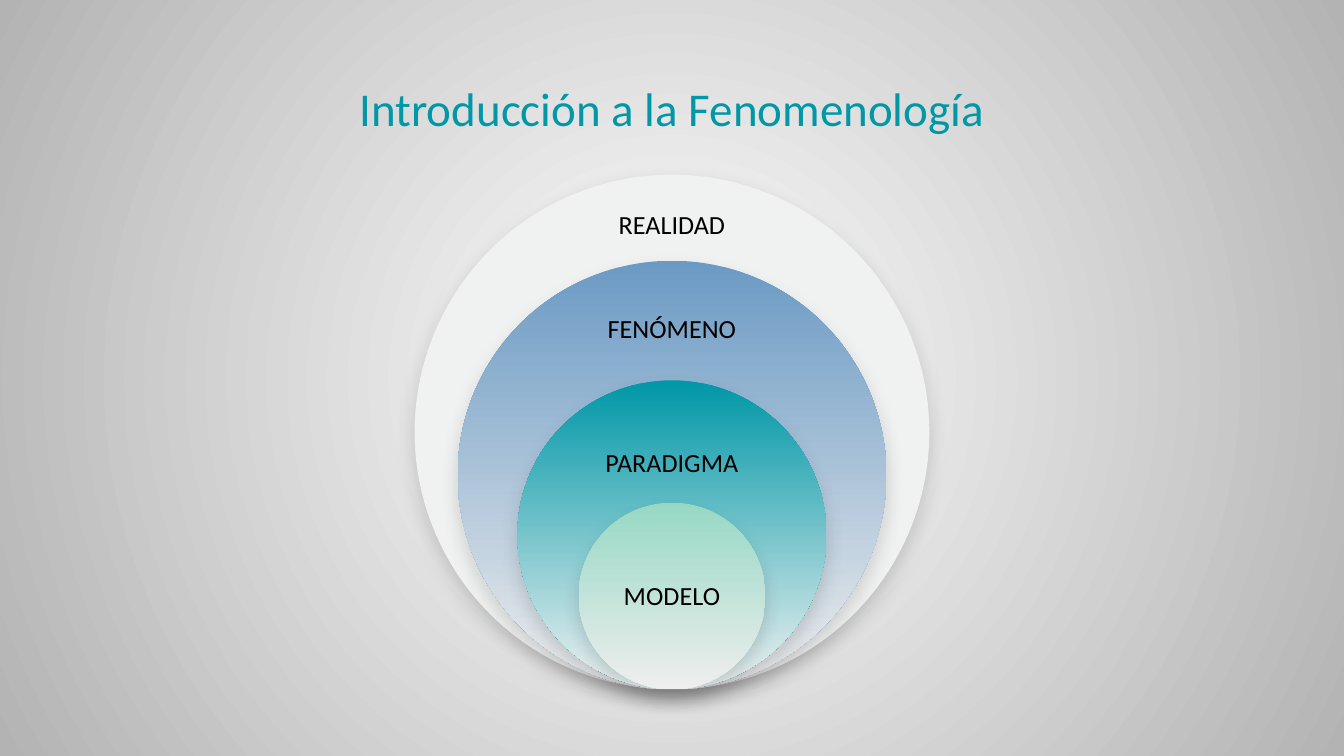
from dataclasses import dataclass

from lxml.etree import SubElement
from pptx import Presentation
from pptx.dml.color import RGBColor
from pptx.enum.shapes import MSO_SHAPE as Shape
from pptx.enum.text import MSO_ANCHOR as Anchor, PP_ALIGN as Align
from pptx.oxml.ns import qn
from pptx.util import Inches, Pt


@dataclass(frozen=True)
class Theme:
    """Colours, font and type sizes of the slide."""
    font: str = "Calibri"
    title_size: float = 25.2
    label_size: float = 14
    title: str = "0097A7"
    label: str = "000000"
    shadow: str = "000000"
    backdrop: tuple = ("FFFFFF", "B3B3B3")
    reality: tuple = ("EFF2F1",)
    phenomenon: tuple = ("6B9AC4", "EEEEEE")
    paradigm: tuple = ("0097A7", "EFF2F1")
    model: tuple = ("97D8C4", "EEEEEE")


@dataclass(frozen=True)
class Ring:
    """A circle and its label, with the label's drop from the circle's top."""
    label: str
    diameter: float
    label_width: float
    drop: float
    colours: tuple
    shadow_distance: float = 5.2


THEME = Theme()

RINGS = [
    Ring("REALIDAD", 3.83, 1.2, 0.37, THEME.reality, 4.5),
    Ring("FENÓMENO", 3.19, 1.56, 0.5, THEME.phenomenon),
    Ring("PARADIGMA", 2.3, 1.61, 0.61, THEME.paradigm),
    Ring("MODELO", 1.39, 1.28, 0.69, THEME.model),
]


def paint(fill, colours):
    """Fill with one colour, or with a gradient from the first to the second."""
    if len(colours) == 1:
        fill.solid()
        fill.fore_color.rgb = RGBColor.from_string(colours[0])
        return
    fill.gradient()
    for stop, colour in zip(fill.gradient_stops, colours):
        stop.color.rgb = RGBColor.from_string(colour)


def add_shadow(shape, distance, blur=10.1, opacity=15):
    """Give a shape a soft shadow that falls straight down."""
    shape.shadow.inherit = False
    effects = shape.element.spPr.find(qn("a:effectLst"))
    shadow = SubElement(effects, qn("a:outerShdw"), blurRad=str(Pt(blur)),
                        dist=str(Pt(distance)), dir="5400000",
                        algn="bl", rotWithShape="0")
    colour = SubElement(shadow, qn("a:srgbClr"), val=THEME.shadow)
    SubElement(colour, qn("a:alpha"), val=str(opacity * 1000))


def add_text(page, text, left, top, width, height, *, size, colour,
             anchor=Anchor.MIDDLE):
    """Add a centred line of text in a box measured in inches."""
    box = page.shapes.add_textbox(*map(Inches, (left, top, width, height)))
    frame = box.text_frame
    frame.word_wrap = True
    frame.vertical_anchor = anchor
    frame.margin_left = frame.margin_right = Inches(0.1)
    frame.margin_top = frame.margin_bottom = Inches(0.1)
    para = frame.paragraphs[0]
    para.alignment = Align.CENTER
    span = para.add_run()
    span.text = text
    span.font.name = THEME.font
    span.font.size = Pt(size)
    span.font.color.rgb = RGBColor.from_string(colour)


def add_backdrop(page):
    """Paint the page with a gradient that spreads from its centre."""
    paint(page.background.fill, THEME.backdrop)
    linear = page.element.find(".//" + qn("a:lin"))
    gradient = linear.getparent()
    gradient.remove(linear)
    radial = SubElement(gradient, qn("a:path"), path="circle")
    SubElement(radial, qn("a:fillToRect"), l="50000", t="50000", r="50000", b="50000")


def add_nested_circles(page, left, top, width, height):
    """Draw circles that share the lowest point of the box, each with a label."""
    centre, bottom = left + width / 2, top + height
    for ring in RINGS:
        size = ring.diameter
        circle = page.shapes.add_shape(
            Shape.OVAL, Inches(centre - size / 2), Inches(bottom - size),
            Inches(size), Inches(size))
        paint(circle.fill, ring.colours)
        if len(ring.colours) > 1:
            circle.fill.gradient_angle = 270
        circle.line.fill.background()
        add_shadow(circle, ring.shadow_distance)
    label_height = 0.44
    for ring in RINGS:
        add_text(page, ring.label, centre - ring.label_width / 2,
                 bottom - ring.diameter + ring.drop - label_height / 2,
                 ring.label_width, label_height,
                 size=THEME.label_size, colour=THEME.label)


def main():
    """Build the slide and save it."""
    deck = Presentation()
    deck.slide_width = Inches(10)
    deck.slide_height = deck.slide_width * 9 // 16
    page = deck.slides.add_slide(deck.slide_layouts[6])
    add_backdrop(page)
    add_nested_circles(page, 3.08, 1.3, 3.84, 3.83)
    add_text(page, "Introducción a la Fenomenología", 0.34, 0.49, 9.32, 0.63,
             size=THEME.title_size, colour=THEME.title, anchor=Anchor.TOP)
    deck.save("out.pptx")


if __name__ == "__main__":
    main()
